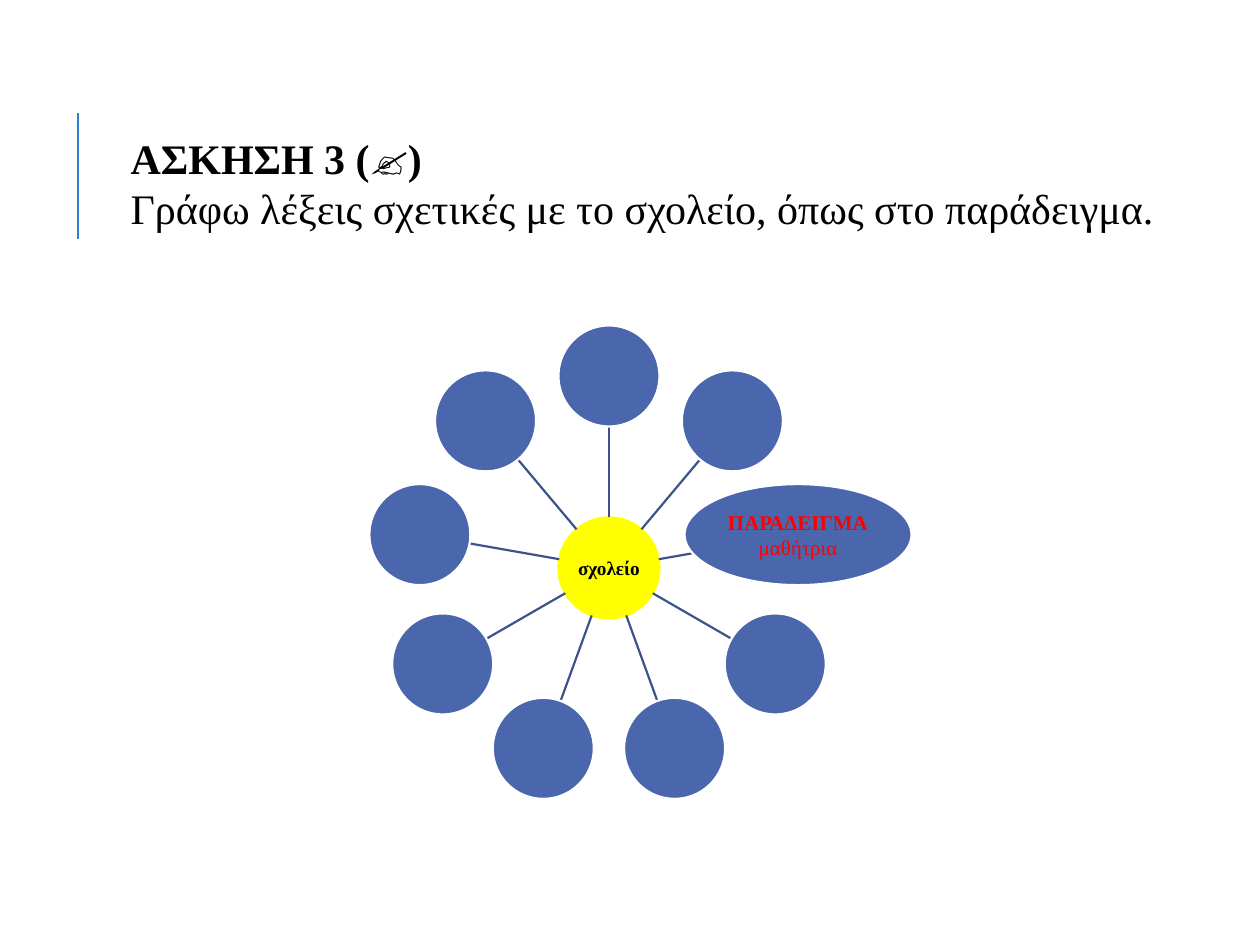
from dataclasses import dataclass
from math import cos, radians, sin

from lxml.etree import SubElement
from pptx import Presentation
from pptx.dml.color import RGBColor
from pptx.enum.shapes import MSO_CONNECTOR, MSO_SHAPE
from pptx.enum.text import MSO_ANCHOR, MSO_AUTO_SIZE, PP_ALIGN
from pptx.oxml.ns import qn
from pptx.util import Emu, Pt

EMU_PER_PX = 914400 / 126


@dataclass(frozen=True)
class Theme:
    font: str = "Times New Roman"
    ink: str = "000000"
    example: str = "FF0000"
    hub: str = "FFFF00"
    bubble: str = "4A66AC"
    outline: str = "FFFFFF"
    spoke: str = "3B528A"
    accent: str = "297FD5"
    title_size: float = 24
    hub_size: float = 11
    example_size: float = 12
    thin: float = 1.25
    thick: float = 1.5


@dataclass(frozen=True)
class Line:
    text: str
    bold: bool


@dataclass(frozen=True)
class Bubble:
    angle: int
    width: int = 101
    spoke_end: int = 142
    lines: tuple[Line, ...] = ()


THEME = Theme()
CENTER = (609, 568)
RING_RADIUS = 192
DIAMETER = 101
STEP = 40
EXAMPLE = Bubble(
    -10, width=227, spoke_end=84,
    lines=(Line("ΠΑΡΑΔΕΙΓΜΑ", True), Line("μαθήτρια", False)),
)
BUBBLES = [
    EXAMPLE if angle == EXAMPLE.angle else Bubble(angle)
    for angle in range(-90, 270, STEP)
]
TITLE = (
    Line("ΑΣΚΗΣΗ 3 (✍)", True),
    Line("Γράφω λέξεις σχετικές με το σχολείο, όπως στο παράδειγμα.", False),
)


def px(value: float) -> Emu:
    return Emu(round(value * EMU_PER_PX))


def apply(target, values: dict) -> None:
    for key, value in values.items():
        setattr(target, key, value)


def on_ray(angle: int, radius: float) -> tuple[float, float]:
    """Point at a clockwise angle and distance from the hub centre."""
    turn = radians(angle)
    return CENTER[0] + radius * cos(turn), CENTER[1] + radius * sin(turn)


def write(frame, lines: tuple[Line, ...], size: float, color: str, align: PP_ALIGN) -> None:
    for index, line in enumerate(lines):
        paragraph = frame.add_paragraph() if index else frame.paragraphs[0]
        paragraph.alignment = align
        run = paragraph.add_run()
        run.text = line.text
        apply(run.font, {"name": THEME.font, "size": Pt(size), "bold": line.bold})
        run.font.color.rgb = RGBColor.from_string(color)


def add_line(slide, start: tuple, end: tuple, color: str, weight: float) -> None:
    line = slide.shapes.add_connector(
        MSO_CONNECTOR.STRAIGHT, *(px(value) for value in (*start, *end))
    )
    line.line.color.rgb = RGBColor.from_string(color)
    line.line.width = Pt(weight)
    SubElement(line._element.spPr, qn("a:effectLst"))


def add_ellipse(slide, center: tuple, width: int, fill: str, outline: str):
    left, top = center[0] - width / 2, center[1] - DIAMETER / 2
    ellipse = slide.shapes.add_shape(
        MSO_SHAPE.OVAL, px(left), px(top), px(width), px(DIAMETER)
    )
    ellipse.shadow.inherit = False
    ellipse.fill.solid()
    ellipse.fill.fore_color.rgb = RGBColor.from_string(fill)
    ellipse.line.color.rgb = RGBColor.from_string(outline)
    ellipse.line.width = Pt(THEME.thin)
    margins = dict.fromkeys(
        ("margin_left", "margin_top", "margin_right", "margin_bottom"), px(1)
    )
    apply(ellipse.text_frame, {
        **margins, "word_wrap": True, "vertical_anchor": MSO_ANCHOR.MIDDLE,
    })
    return ellipse


def add_title(slide) -> None:
    title = slide.shapes.title
    apply(title, {
        "left": px(118), "top": px(125), "width": px(1071), "height": px(115),
    })
    apply(title.text_frame, {
        "word_wrap": True,
        "vertical_anchor": MSO_ANCHOR.MIDDLE,
        "auto_size": MSO_AUTO_SIZE.SHAPE_TO_FIT_TEXT,
    })
    write(title.text_frame, TITLE, THEME.title_size, THEME.ink, PP_ALIGN.JUSTIFY)


def add_word_web(slide) -> None:
    hub = add_ellipse(slide, CENTER, DIAMETER, THEME.hub, THEME.hub)
    write(hub.text_frame, (Line("σχολείο", True),),
          THEME.hub_size, THEME.ink, PP_ALIGN.CENTER)
    for bubble in BUBBLES:
        add_line(slide, on_ray(bubble.angle, DIAMETER / 2),
                 on_ray(bubble.angle, bubble.spoke_end), THEME.spoke, THEME.thin)
        ellipse = add_ellipse(slide, on_ray(bubble.angle, RING_RADIUS),
                              bubble.width, THEME.bubble, THEME.outline)
        write(ellipse.text_frame, bubble.lines,
              THEME.example_size, THEME.example, PP_ALIGN.CENTER)


def main() -> None:
    presentation = Presentation()
    apply(presentation, {"slide_width": px(1260), "slide_height": px(945)})
    slide = presentation.slides.add_slide(presentation.slide_layouts[5])
    add_line(slide, (78, 239), (78, 113), THEME.accent, THEME.thick)
    add_word_web(slide)
    add_title(slide)
    presentation.save("out.pptx")


if __name__ == "__main__":
    main()
